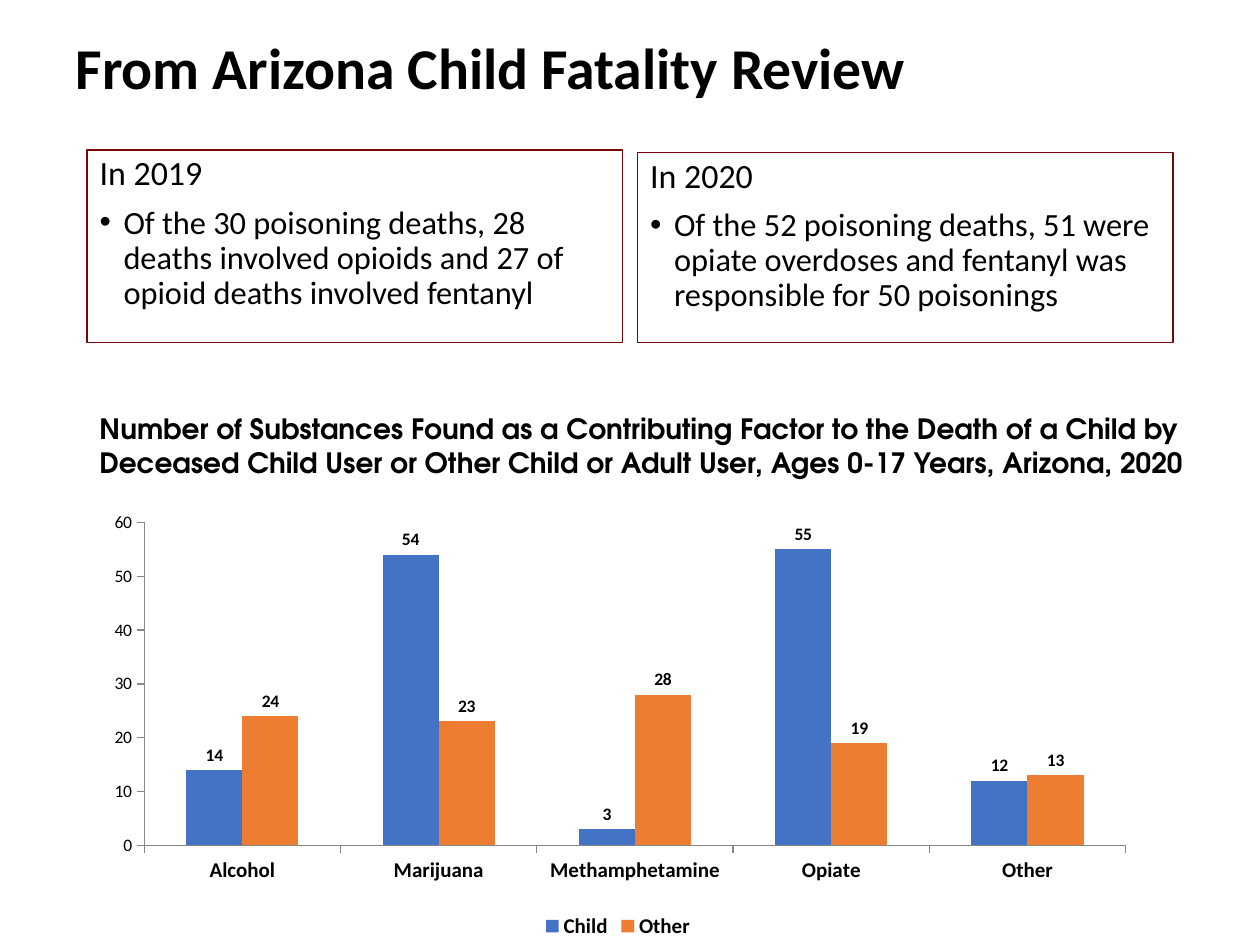
from lxml import etree
from pptx import Presentation
from pptx.chart.data import CategoryChartData
from pptx.dml.color import RGBColor
from pptx.enum.chart import XL_CHART_TYPE, XL_LABEL_POSITION, XL_LEGEND_POSITION, XL_TICK_MARK
from pptx.enum.text import MSO_ANCHOR, MSO_AUTO_SIZE, PP_ALIGN
from pptx.oxml import parse_xml
from pptx.oxml.ns import nsdecls, qn
from pptx.util import Inches, Pt

CLUSTERED = XL_CHART_TYPE.COLUMN_CLUSTERED
OUTSIDE_END = XL_LABEL_POSITION.OUTSIDE_END
BOTTOM = XL_LEGEND_POSITION.BOTTOM
TICK_OUT = XL_TICK_MARK.OUTSIDE
MIDDLE, TOP = MSO_ANCHOR.MIDDLE, MSO_ANCHOR.TOP
NO_FIT, LEFT = MSO_AUTO_SIZE.NONE, PP_ALIGN.LEFT

COLORS = {"text": "000000", "border": "7A0306", "axis": "878787",
          "Child": "4472C4", "Other": "ED7D31"}
BODY_FONT, CAPTION_FONT = "Calibri", "TeX Gyre Adventor"

TITLE = "From Arizona Child Fatality Review"
YEARS = [
    ("In 2019", "Of the 30 poisoning deaths, 28 deaths involved opioids and 27 of "
                "opioid deaths involved fentanyl", (0.69, 1.19, 4.25, 1.53)),
    ("In 2020", "Of the 52 poisoning deaths, 51 were opiate overdoses and fentanyl was "
                "responsible for 50 poisonings", (5.06, 1.21, 4.25, 1.51)),
]
CAPTION = ("Number of Substances Found as a Contributing Factor to the Death of a Child by "
           "Deceased Child User or Other Child or Adult User, Ages 0-17 Years, Arizona, 2020")
SUBSTANCES = ["Alcohol", "Marijuana", "Methamphetamine", "Opiate", "Other"]
DEATHS = {"Child": [14, 54, 3, 55, 12], "Other": [24, 23, 28, 19, 13]}
PLOT_AREA = {"x": 0.054, "y": 0.053, "w": 0.924, "h": 0.726}


def color(name):
    """Return the named colour."""
    return RGBColor.from_string(COLORS[name])


def style_font(font, size, bold=False, name=BODY_FONT):
    """Set face, size, weight and colour of a font."""
    font.name, font.size, font.bold = name, Pt(size), bold
    font.color.rgb = color("text")


def place(shape, left, top, width, height):
    """Move and size a shape in inches."""
    shape.left, shape.top = Inches(left), Inches(top)
    shape.width, shape.height = Inches(width), Inches(height)


def fill_title(title):
    """Write the slide title."""
    place(title, 0.5, 0.02, 8.62, 1.08)
    frame = title.text_frame
    frame.text = TITLE
    frame.auto_size, frame.vertical_anchor = NO_FIT, MIDDLE
    para = frame.paragraphs[0]
    para.alignment, para.line_spacing = LEFT, 0.9
    style_font(para.runs[0].font, 33, True)


def fill_year(box, heading, finding, position):
    """Write one bordered box with a heading and a bulleted finding."""
    place(box, *position)
    box.line.color.rgb = color("border")
    box.line.width = Pt(0.75)
    frame = box.text_frame
    frame.text = f"{heading}\n{finding}"
    frame.auto_size, frame.vertical_anchor = NO_FIT, TOP
    indent = Inches(0.19)
    bullets = [("buNone", {}, 0, 19.4), ("buChar", {"char": "•"}, indent, 18.5)]
    for para, (tag, attributes, margin, size) in zip(frame.paragraphs, bullets):
        para.line_spacing, para.space_before = 0.9, Pt(7.5)
        style_font(para.runs[0].font, size)
        properties = para._p.get_or_add_pPr()
        properties.set("marL", str(margin))
        properties.set("indent", str(-margin))
        etree.SubElement(properties, qn(f"a:{tag}"), attributes)


def add_caption(slide):
    """Add the heading above the chart."""
    box = slide.shapes.add_textbox(Inches(0.69), Inches(3.22), Inches(8.88), Inches(0.64))
    frame = box.text_frame
    frame.word_wrap = True
    frame.text = CAPTION
    para = frame.paragraphs[0]
    para.space_after = Pt(5)
    style_font(para.runs[0].font, 16, True, CAPTION_FONT)


def add_deaths_chart(slide):
    """Add the clustered columns of substances by user."""
    data = CategoryChartData()
    data.categories = SUBSTANCES
    for user, counts in DEATHS.items():
        data.add_series(user, counts)
    chart = slide.shapes.add_chart(CLUSTERED, Inches(0.69), Inches(3.96),
                                   Inches(8.43), Inches(3.53), data).chart
    style_font(chart.font, 10)
    chart.has_title = False
    chart.has_legend = True
    chart.legend.position = BOTTOM
    chart.legend.include_in_layout = False
    style_font(chart.legend.font, 12, True)

    plot = chart.plots[0]
    plot.gap_width, plot.overlap, plot.vary_by_categories = 150, 0, False
    for series in plot.series:
        series.format.fill.solid()
        series.format.fill.fore_color.rgb = color(series.name)
        labels = series.data_labels
        labels.show_value, labels.position = True, OUTSIDE_END
        style_font(labels.font, 10, True)

    values = chart.value_axis
    values.minimum_scale, values.maximum_scale, values.major_unit = 0, 60, 10
    values.has_major_gridlines = False
    for axis, size, bold in ((chart.category_axis, 12, True), (values, 10, False)):
        axis.major_tick_mark = TICK_OUT
        axis.format.line.color.rgb = color("axis")
        axis.format.line.width = Pt(0.75)
        style_font(axis.tick_labels.font, size, bold)

    area = chart._chartSpace.chart.plotArea
    for old in area.findall(qn("c:layout")):
        area.remove(old)
    sizes = "".join(f'<c:{side} val="{share}"/>' for side, share in PLOT_AREA.items())
    area.insert(0, parse_xml(
        f'<c:layout {nsdecls("c")}><c:manualLayout><c:layoutTarget val="inner"/>'
        f'<c:xMode val="edge"/><c:yMode val="edge"/>{sizes}</c:manualLayout></c:layout>'))


def main():
    """Build the slide and save the deck."""
    deck = Presentation()
    deck.slide_width, deck.slide_height = Inches(10), Inches(7.5)
    slide = deck.slides.add_slide(deck.slide_layouts[3])
    fill_title(slide.shapes.title)
    for index, year in enumerate(YEARS, start=1):
        fill_year(slide.placeholders[index], *year)
    add_deaths_chart(slide)
    add_caption(slide)
    deck.save("out.pptx")


if __name__ == "__main__":
    main()
